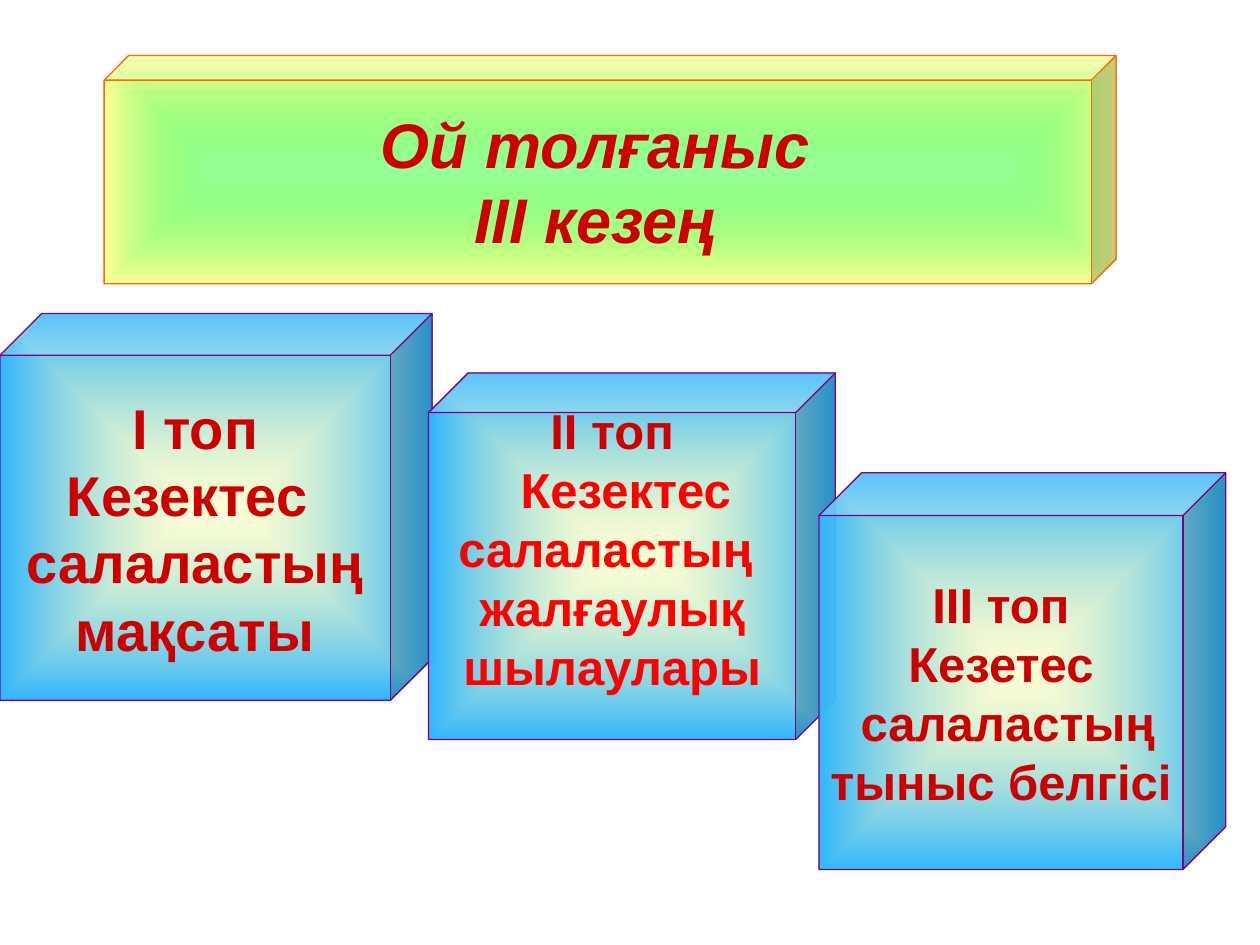
from dataclasses import dataclass

from lxml.etree import SubElement
from pptx import Presentation
from pptx.dml.color import RGBColor
from pptx.enum.shapes import MSO_SHAPE
from pptx.enum.text import MSO_ANCHOR, MSO_AUTO_SIZE, PP_ALIGN
from pptx.oxml.ns import qn
from pptx.util import Cm, Pt


@dataclass(frozen=True)
class Theme:
    font: str = "Arial"
    dark_red: str = "CC0000"
    red: str = "FF0000"
    green: str = "00FF00"
    yellow: str = "FFFF99"
    blue: str = "31B6FD"
    orange: str = "FF6600"
    purple: str = "800080"
    title_size: int = 36
    lead_size: int = 32
    group_size: int = 28
    outline: float = 0.75


THEME = Theme()


def fill_from_center(block, center, edge):
    block.fill.gradient()
    for stop, color in zip(block.fill.gradient_stops, (center, edge)):
        stop.color.rgb = RGBColor.from_string(color)
    gradient = block._element.spPr.find(qn("a:gradFill"))
    center_color = gradient.find(".//" + qn("a:srgbClr"))
    SubElement(center_color, qn("a:alpha")).set("val", "40000")
    gradient.remove(gradient.find(qn("a:lin")))
    spread = SubElement(gradient, qn("a:path"))
    spread.set("path", "rect")
    focus = SubElement(spread, qn("a:fillToRect"))
    for side in "ltrb":
        focus.set(side, "50000")


def add_cube(slide, left, top, width, height, center, edge, outline):
    cube = slide.shapes.add_shape(
        MSO_SHAPE.CUBE, Cm(left), Cm(top), Cm(width), Cm(height))
    cube.adjustments[0] = 0.108
    cube.shadow.inherit = False
    fill_from_center(cube, center, edge)
    cube.line.color.rgb = RGBColor.from_string(outline)
    cube.line.width = Pt(THEME.outline)
    return cube


def add_line(frame, text, *, size, color=THEME.dark_red, italic=False,
             first=False, indent=0):
    line = frame.paragraphs[0] if first else frame.add_paragraph()
    line.alignment = PP_ALIGN.CENTER
    if indent:
        line._p.get_or_add_pPr().set("marL", str(Cm(indent)))
    run = line.add_run()
    run.text = text
    run.font.name = THEME.font
    run.font.size = Pt(size)
    run.font.bold = True
    run.font.italic = italic
    run.font.color.rgb = RGBColor.from_string(color)


def add_title(slide):
    add_cube(slide, 2.1, 1.12, 20.4, 4.6,
             THEME.green, THEME.yellow, THEME.orange)
    title = slide.shapes.add_textbox(Cm(3.3), Cm(2), Cm(17.4), Cm(3.3))
    frame = title.text_frame
    frame.word_wrap = True
    frame.auto_size = MSO_AUTO_SIZE.SHAPE_TO_FIT_TEXT
    for index, text in enumerate(("Ой толғаныс", "ІІІ кезең")):
        add_line(frame, text, size=THEME.title_size, italic=True,
                 first=index == 0)


def add_group(slide, place, name, task, size, task_color=THEME.dark_red,
              first_indent=0, bottom=0):
    cube = add_cube(slide, *place, THEME.yellow, THEME.blue, THEME.purple)
    frame = cube.text_frame
    frame.word_wrap = False
    frame.vertical_anchor = MSO_ANCHOR.MIDDLE
    frame.margin_left = frame.margin_right = frame.margin_top = 0
    frame.margin_bottom = Cm(bottom)
    add_line(frame, name, size=size, first=True)
    for index, text in enumerate(task):
        add_line(frame, text, size=size, color=task_color,
                 indent=first_indent if index == 0 else 0)


def main():
    presentation = Presentation()
    presentation.slide_width = Cm(25.4)
    presentation.slide_height = Cm(19.05)
    slide = presentation.slides.add_slide(presentation.slide_layouts[6])
    add_title(slide)
    add_group(slide, (0, 6.32, 8.71, 7.8), "І топ",
              ("Кезектес ", "салаластың", "мақсаты"), THEME.lead_size)
    add_group(slide, (8.64, 7.52, 8.2, 7.39), "ІІ топ",
              ("Кезектес ", "салаластың ", "жалғаулық", "шылаулары"),
              THEME.group_size, THEME.red, first_indent=0.82, bottom=1.13)
    add_group(slide, (16.51, 9.53, 8.2, 8), "ІІІ топ",
              ("Кезетес", " салаластың", "тыныс белгісі"),
              THEME.group_size)
    presentation.save("out.pptx")


if __name__ == "__main__":
    main()
